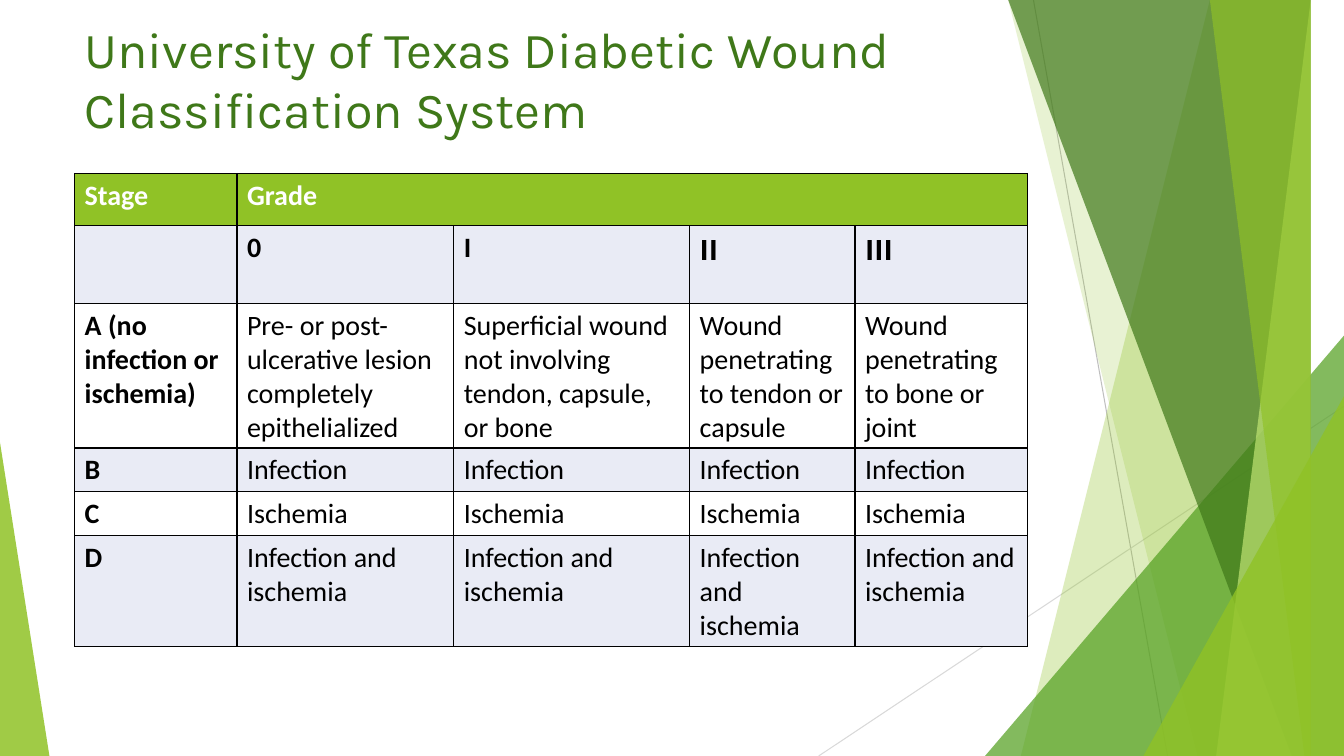
"""Build the diabetic wound classification slide."""
from dataclasses import dataclass

from lxml.etree import SubElement
from pptx import Presentation
from pptx.dml.color import RGBColor
from pptx.enum.shapes import MSO_CONNECTOR, MSO_SHAPE
from pptx.enum.text import MSO_ANCHOR, PP_ALIGN
from pptx.oxml.ns import qn
from pptx.shapes.autoshape import Shape
from pptx.slide import Slide
from pptx.table import _Cell
from pptx.text.text import _Paragraph
from pptx.util import Inches, Pt


@dataclass(frozen=True)
class Theme:
    """Colours, fonts and type sizes of the slide."""
    lime: str = "90C226"
    green: str = "54A021"
    forest: str = "3F7819"
    pale_lime: str = "C0E474"
    band: str = "E9EBF5"
    white: str = "FFFFFF"
    black: str = "000000"
    title_font: str = "Karla"
    body_font: str = "Calibri"
    numeral_font: str = "Open Sans"
    title_size: int = 36
    body_size: int = 20
    border_width: float = 1


THEME = Theme()
WIDTH, HEIGHT = 13.33, 7.5
TOP = -0.01


@dataclass(frozen=True)
class Ray:
    """A thin straight line behind the facets."""
    start: tuple[float, float]
    end: tuple[float, float]
    color: str


@dataclass(frozen=True)
class Facet:
    """A full-height translucent panel reaching the right edge."""
    top_left: float
    bottom_left: float
    color: str
    opacity: int


@dataclass(frozen=True)
class Corner:
    """A translucent right triangle standing on the bottom edge."""
    left: float
    width: float
    height: float
    apex: float
    color: str
    opacity: int


RAYS = (
    Ray((10.25, 0), (11.58, HEIGHT), "BFBFBF"),
    Ray((WIDTH, 4.03), (8.12, HEIGHT), "D9D9D9"),
)
DECORATIONS = (
    Facet(12.28, 10.04, THEME.lime, 30),
    Facet(10.5, 11.83, THEME.lime, 20),
    Corner(9.77, 3.56, 4.17, 1, THEME.green, 72),
    Facet(10.21, 12.91, THEME.forest, 70),
    Facet(13.03, 11.92, THEME.pale_lime, 70),
    Facet(11.96, 13.18, THEME.lime, 65),
    Corner(11.34, 1.99, 3.57, 1, THEME.lime, 80),
    Corner(0, 0.49, 3.11, 0, THEME.lime, 85),
)

TITLE = "University of Texas Diabetic Wound Classiﬁcation System"
COLUMN_WIDTHS = (1.61, 2.15, 2.34, 1.64, 1.71)
ROW_HEIGHTS = (0.52, 0.77, 1.43, 0.43, 0.43, 1.1)
ROWS = (
    ("Stage", "Grade", "", "", ""),
    ("", "0", "I", "II", "III"),
    (
        "A (no infection or ischemia)",
        "Pre- or post-ulcerative lesion completely epithelialized",
        "Superficial wound not involving tendon, capsule, or bone",
        "Wound penetrating to tendon or capsule",
        "Wound penetrating to bone or joint",
    ),
    ("B", *["Infection"] * 4),
    ("C", *["Ischemia"] * 4),
    ("D", *["Infection and ischemia"] * 4),
)


def add_run(paragraph: _Paragraph, text: str, font: str, size: float,
            color: str, bold: bool = False) -> None:
    """Append one styled run."""
    run = paragraph.add_run()
    run.text = text
    run.font.name = font
    run.font.size = Pt(size)
    run.font.bold = bold
    run.font.color.rgb = RGBColor.from_string(color)


def paint(shape: Shape, color: str, opacity: int) -> None:
    """Give a shape a translucent fill without line or shadow."""
    shape.shadow.inherit = False
    shape.line.fill.background()
    shape.fill.solid()
    shape.fill.fore_color.rgb = RGBColor.from_string(color)
    color_element = next(shape.element.spPr.iter(qn("a:srgbClr")))
    SubElement(color_element, qn("a:alpha"), val=str(opacity * 1000))


def add_ray(slide: Slide, ray: Ray) -> None:
    """Draw one thin line."""
    connector = slide.shapes.add_connector(
        MSO_CONNECTOR.STRAIGHT, *map(Inches, ray.start + ray.end))
    connector.line.width = Pt(0.75)
    connector.line.color.rgb = RGBColor.from_string(ray.color)
    SubElement(connector.element.spPr, qn("a:effectLst"))


def add_facet(slide: Slide, facet: Facet) -> None:
    """Draw one panel."""
    builder = slide.shapes.build_freeform(
        facet.top_left, TOP, scale=Inches(1))
    builder.add_line_segments(
        [(WIDTH, TOP), (WIDTH, HEIGHT), (facet.bottom_left, HEIGHT)])
    paint(builder.convert_to_shape(), facet.color, facet.opacity)


def add_corner(slide: Slide, corner: Corner) -> None:
    """Draw one triangle."""
    shape = slide.shapes.add_shape(
        MSO_SHAPE.ISOSCELES_TRIANGLE, Inches(corner.left),
        Inches(HEIGHT - corner.height), Inches(corner.width),
        Inches(corner.height))
    shape.adjustments[0] = corner.apex
    paint(shape, corner.color, corner.opacity)


def add_title(slide: Slide) -> None:
    """Write the slide title."""
    box = slide.shapes.add_textbox(
        Inches(0.74), Inches(0.13), Inches(9.4), Inches(1.98))
    frame = box.text_frame
    frame.word_wrap = True
    frame.vertical_anchor = MSO_ANCHOR.TOP
    add_run(frame.paragraphs[0], TITLE, THEME.title_font,
            THEME.title_size, THEME.forest)


def style_cell(cell: _Cell, fill: str) -> None:
    """Set the borders and fill of a cell."""
    properties = cell._tc.get_or_add_tcPr()
    for side in ("lnL", "lnR", "lnT", "lnB"):
        border = SubElement(properties, qn(f"a:{side}"),
                            w=str(Pt(THEME.border_width)))
        solid = SubElement(border, qn("a:solidFill"))
        SubElement(solid, qn("a:srgbClr"), val=THEME.black)
    cell.fill.solid()
    cell.fill.fore_color.rgb = RGBColor.from_string(fill)


def add_grade_table(slide: Slide) -> None:
    """Build the table of stages and grades."""
    table = slide.shapes.add_table(
        len(ROWS), len(COLUMN_WIDTHS), Inches(0.74), Inches(1.72),
        Inches(sum(COLUMN_WIDTHS)), Inches(sum(ROW_HEIGHTS))).table
    for column, width in zip(table.columns, COLUMN_WIDTHS):
        column.width = Inches(width)
    for row, height in zip(table.rows, ROW_HEIGHTS):
        row.height = Inches(height)
    table.cell(0, 1).merge(table.cell(0, len(COLUMN_WIDTHS) - 1))
    for row_index, texts in enumerate(ROWS):
        header = row_index == 0
        fill = THEME.lime if header else (THEME.band if row_index % 2 else THEME.white)
        for column_index, text in enumerate(texts):
            cell = table.cell(row_index, column_index)
            style_cell(cell, fill)
            if text:
                add_run(cell.text_frame.paragraphs[0], text,
                        THEME.numeral_font if text in ("II", "III") else THEME.body_font,
                        THEME.body_size, THEME.white if header else THEME.black,
                        bold=row_index < 2 or column_index == 0)
    table.cell(0, 1).text_frame.paragraphs[0].alignment = PP_ALIGN.JUSTIFY


def main() -> None:
    """Assemble and save the slide."""
    presentation = Presentation()
    presentation.slide_width = Inches(WIDTH)
    presentation.slide_height = Inches(HEIGHT)
    slide = presentation.slides.add_slide(presentation.slide_layouts[6])
    for ray in RAYS:
        add_ray(slide, ray)
    for decoration in DECORATIONS:
        if isinstance(decoration, Facet):
            add_facet(slide, decoration)
        else:
            add_corner(slide, decoration)
    add_title(slide)
    add_grade_table(slide)
    presentation.save("out.pptx")


if __name__ == "__main__":
    main()
